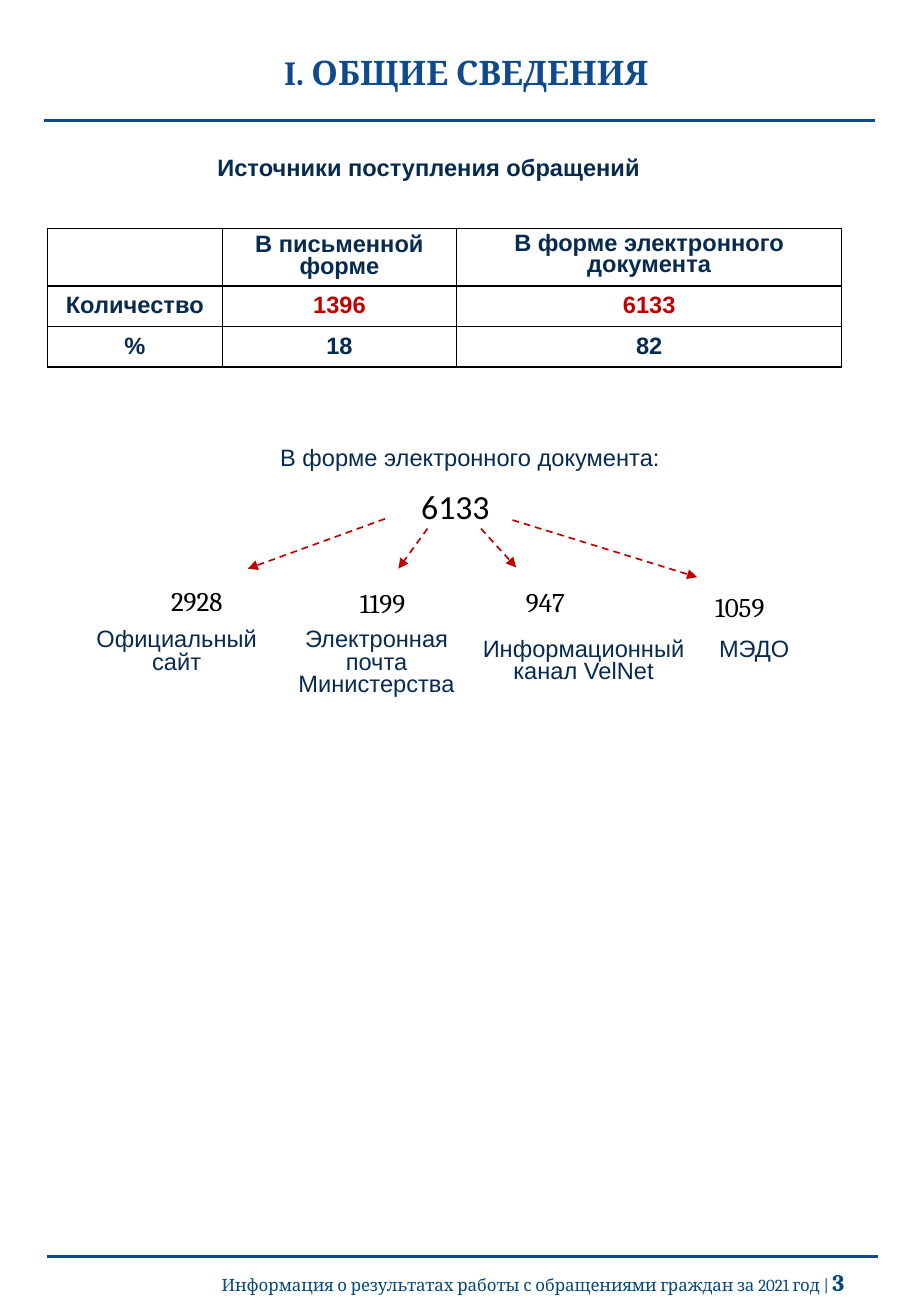
from lxml.etree import SubElement
from pptx import Presentation
from pptx.dml.color import RGBColor
from pptx.enum.dml import MSO_LINE
from pptx.enum.shapes import MSO_CONNECTOR
from pptx.enum.text import MSO_ANCHOR, MSO_AUTO_SIZE, PP_ALIGN
from pptx.oxml.ns import qn
from pptx.util import Pt

EMU_PER_PX = 9144  # 100 px to the inch
BLUE, NAVY, RED, BLACK = "0E4A8C", "072A50", "C00000", "000000"
FOOTER_BLUE = "064879"


def px(length):
    return int(length * EMU_PER_PX)


def color(hex_value):
    return RGBColor.from_string(hex_value)


def format_run(run, size, font, hex_value, bold=False):
    run.font.size = Pt(size)
    run.font.name = font
    run.font.bold = bold
    run.font.color.rgb = color(hex_value)


def format_paragraph(paragraph, size, font, hex_value, bold=False,
                     spacing=1.0, align=PP_ALIGN.CENTER):
    paragraph.alignment = align
    paragraph.line_spacing = spacing
    for run in paragraph.runs:
        format_run(run, size, font, hex_value, bold)


def add_text(slide, box, text, size, font, hex_value, **options):
    shape = slide.shapes.add_textbox(*map(px, box))
    shape.text_frame.word_wrap = True
    paragraph = shape.text_frame.paragraphs[0]
    paragraph.text = text
    format_paragraph(paragraph, size, font, hex_value, **options)
    return paragraph


def add_line(slide, start, end, hex_value, width):
    connector = slide.shapes.add_connector(
        MSO_CONNECTOR.STRAIGHT, *map(px, (*start, *end)))
    connector.line.color.rgb = color(hex_value)
    connector.line.width = Pt(width)
    SubElement(connector._element.spPr, qn("a:effectLst"))
    return connector


def add_dashed_arrow(slide, start, end):
    line = add_line(slide, start, end, RED, 1).line
    line.dash_style = MSO_LINE.DASH
    SubElement(line._get_or_add_ln(), qn("a:tailEnd"), type="triangle")


def add_header(slide, left, top, width):
    title = slide.shapes.title
    title.left, title.top = px(left - 27), px(top)
    title.width, title.height = px(width + 66), px(51)
    frame = title.text_frame
    frame.text = "I. ОБЩИЕ СВЕДЕНИЯ"
    frame.auto_size = MSO_AUTO_SIZE.NONE
    frame.vertical_anchor = MSO_ANCHOR.BOTTOM
    format_paragraph(frame.paragraphs[0], 20, "Cambria", BLUE, bold=True, spacing=0.9)
    add_line(slide, (left, top + 69), (left + width, top + 69), BLUE, 1.5)


def add_footer(slide, left, top, width, page):
    add_line(slide, (left, top), (left + width, top), BLUE, 1.5)
    paragraph = add_text(
        slide, (left + 128, top + 9, 538, 29),
        "Информация о результатах работы с обращениями граждан за 2021 год | ",
        10, "Cambria", FOOTER_BLUE, spacing=0.8, align=PP_ALIGN.RIGHT)
    number = paragraph.add_run()
    number.text = str(page)
    format_run(number, 14, "Cambria", FOOTER_BLUE, bold=True)


def add_cell_borders(cell):
    properties = cell._tc.get_or_add_tcPr()
    for side in ("lnL", "lnR", "lnT", "lnB"):
        border = SubElement(properties, qn(f"a:{side}"), w=str(Pt(1)))
        fill = SubElement(border, qn("a:solidFill"))
        SubElement(fill, qn("a:srgbClr"), val=BLACK)


def add_source_table(slide, left, top):
    add_text(slide, (left + 64, top - 63, 500, 29), "Источники поступления обращений",
             14, "Arial", NAVY, bold=True, spacing=0.8)
    rows = [
        ("", "В письменной форме", "В форме электронного\vдокумента"),
        ("Количество", "1396", "6133"),
        ("%", "18", "82"),
    ]
    widths, heights = (144, 193, 317), (47, 33, 33)
    table = slide.shapes.add_table(
        len(rows), len(widths), px(left), px(top), px(sum(widths)), px(sum(heights))).table
    table.first_row = table.horz_banding = False
    for column, width in zip(table.columns, widths):
        column.width = px(width)
    for row_index, (values, height) in enumerate(zip(rows, heights)):
        table.rows[row_index].height = px(height)
        for column_index, value in enumerate(values):
            cell = table.cell(row_index, column_index)
            add_cell_borders(cell)
            cell.fill.background()
            cell.text = value
            is_count = row_index == 1 and column_index > 0
            format_paragraph(cell.text_frame.paragraphs[0], 14, "Arial",
                             RED if is_count else NAVY, bold=True,
                             spacing=1.0 if row_index else 0.8)
    table.cell(0, 1).vertical_anchor = MSO_ANCHOR.MIDDLE


def add_channel_diagram(slide, left, top):
    """Split the electronic total into channels below it."""
    add_text(slide, (left + 100, top, 440, 29), "В форме электронного документа:",
             14, "Arial", NAVY, spacing=0.8)
    add_text(slide, (left + 268, top + 31, 80, 44), "6133", 20, "Calibri", BLACK)
    # count, its centre and top; label, its left, top and width; arrow start and end
    channels = [
        ("2928", (95, 112), "Официальный сайт", (0, 149, 157), (250, 63), (137, 104)),
        ("1199", (248, 114), "Электронная почта Министерства", (157, 149, 172),
         (285, 71), (261, 104)),
        ("947", (382, 113), "Информационный канал VelNet", (320, 157, 187),
         (329, 71), (358, 103)),
        ("1059", (542, 117), "МЭДО", (471, 157, 166), (355, 64), (507, 111)),
    ]
    for count, (center, count_top), label, (x, y, width), start, end in channels:
        add_text(slide, (left + center - 40, top + count_top, 80, 37),
                 count, 16, "Cambria", BLACK)
        add_text(slide, (left + x, top + y, width, 48), label,
                 14, "Arial", NAVY, spacing=0.8)
        add_dashed_arrow(slide, (left + start[0], top + start[1]),
                         (left + end[0], top + end[1]))


def main():
    presentation = Presentation()
    presentation.slide_width, presentation.slide_height = px(750), px(1083)
    slide = presentation.slides.add_slide(presentation.slide_layouts[5])
    add_header(slide, 36, 30, 684)
    add_source_table(slide, 39, 188)
    add_channel_diagram(slide, 67, 364)
    add_footer(slide, 39, 1034, 684, 3)
    presentation.save("out.pptx")


if __name__ == "__main__":
    main()
